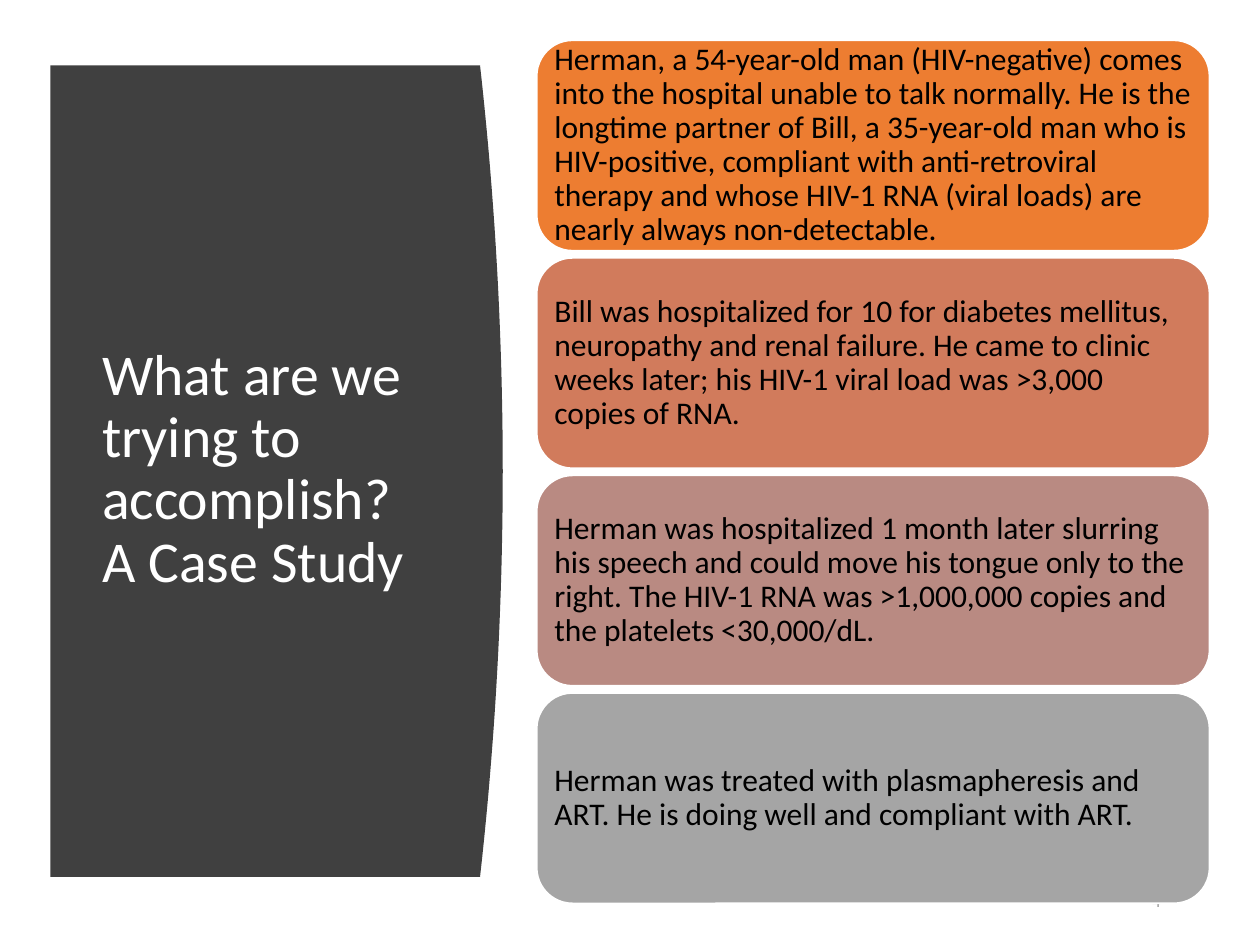
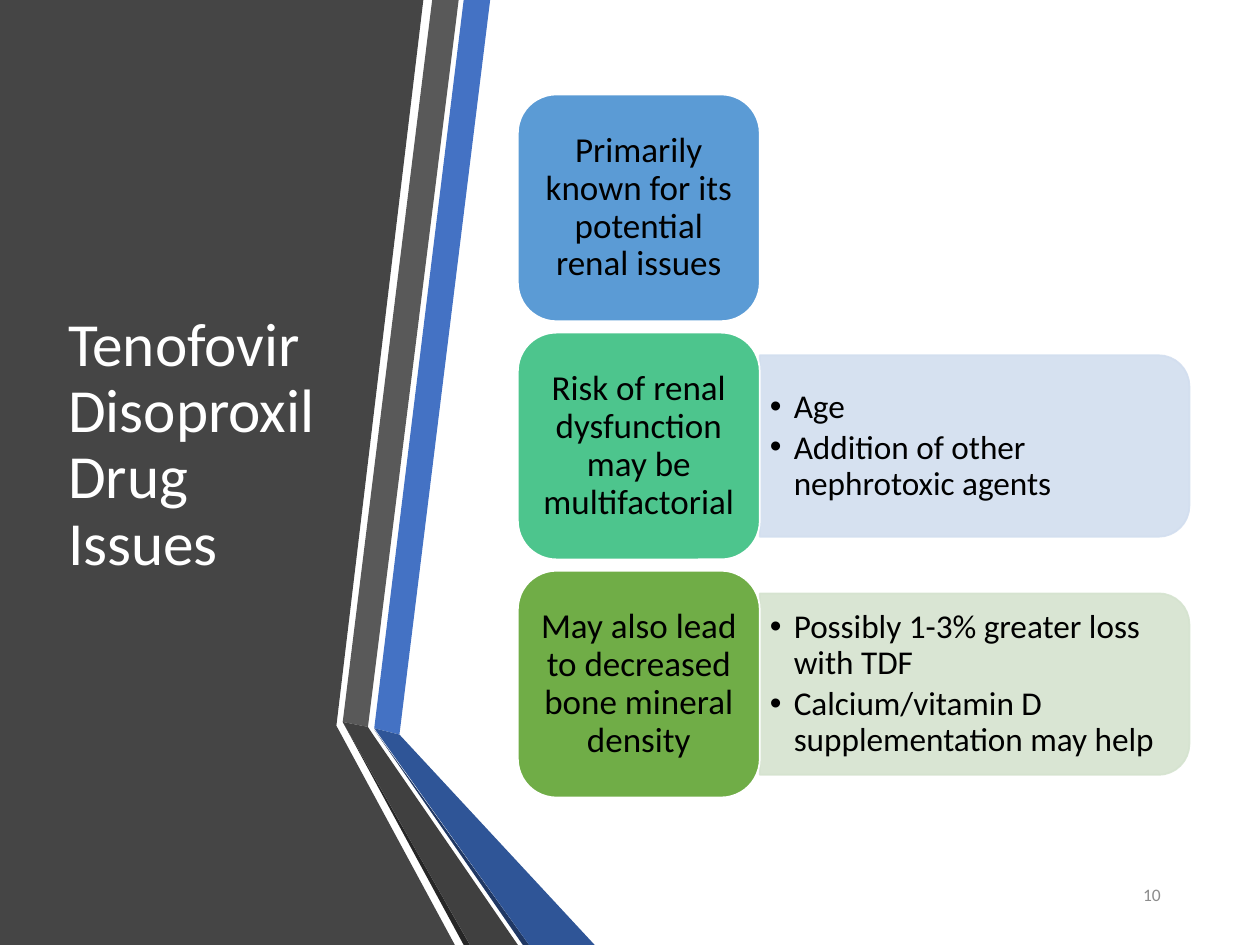
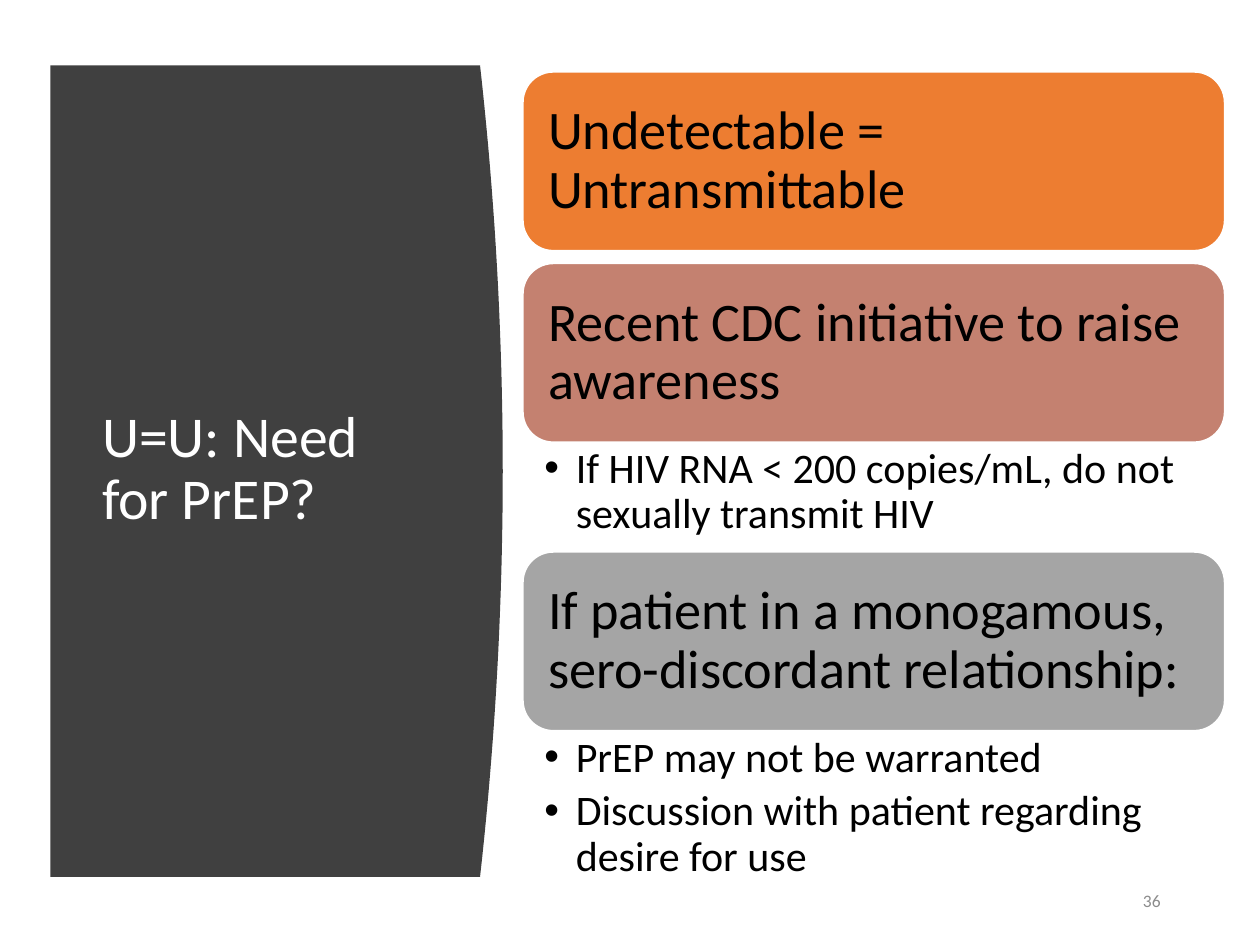
from dataclasses import dataclass
from math import cos, pi, sin

from lxml.etree import SubElement
from pptx import Presentation
from pptx.dml.color import RGBColor
from pptx.enum.shapes import MSO_SHAPE
from pptx.enum.text import MSO_ANCHOR, MSO_AUTO_SIZE, PP_ALIGN
from pptx.oxml.ns import qn
from pptx.util import Inches, Pt

FONT = "Calibri"
WHITE, BLACK = "FFFFFF", "000000"
NUMBER_GRAY = "8C8C8C"
PANEL_GRAY = "404040"
CORNER_RATIO = 0.17
CORNER_INSET = 0.29

Points = list[tuple[float, float]]


@dataclass(frozen=True)
class Box:
    left: float
    top: float
    width: float
    height: float


@dataclass(frozen=True)
class Margins:
    left: float
    top: float
    right: float
    bottom: float


@dataclass(frozen=True)
class TextStyle:
    size: float
    color: str = BLACK
    align: PP_ALIGN = PP_ALIGN.LEFT
    anchor: MSO_ANCHOR = MSO_ANCHOR.MIDDLE
    line_spacing: float = 0.9
    space_after: float = 0
    indent: float = 0


@dataclass(frozen=True)
class Ribbon:
    color: str
    points: Points


@dataclass(frozen=True)
class Card:
    text: str
    color: str
    bullets: tuple[str, ...] = ()
    detail_height: float = 0
    detail_color: str = ""


CASE_CARDS = (
    Card("Herman, a 54-year-old man (HIV-negative) comes into the hospital unable to talk "
         "normally. He is the longtime partner of Bill, a 35-year-old man who is HIV-positive, "
         "compliant with anti-retroviral therapy and whose HIV-1 RNA (viral loads) are nearly "
         "always non-detectable.", "ED7D31"),
    Card("Bill was hospitalized for 10 for diabetes mellitus, neuropathy and renal failure. "
         "He came to clinic weeks later; his HIV-1 viral load was >3,000 copies of RNA.",
         "D17B5C"),
    Card("Herman was hospitalized 1 month later slurring his speech and could move his tongue "
         "only to the right. The HIV-1 RNA was >1,000,000 copies and the platelets "
         "<30,000/dL.", "B98A82"),
    Card("Herman was treated with plasmapheresis and ART. He is doing well and compliant "
         "with ART.", "A5A5A5"),
)

DRUG_CARDS = (
    Card("Primarily known for its potential renal issues", "5B9BD5"),
    Card("Risk of renal dysfunction may be multifactorial", "4DC58D",
         ("Age", "Addition of other nephrotoxic agents"), 1.44, "D2DEEF"),
    Card("May also lead to decreased bone mineral density", "70AD47",
         ("Possibly 1-3% greater loss with TDF", "Calcium/vitamin D supplementation may help"),
         1.44, "D5E3CF"),
)

PREP_CARDS = (
    Card("Undetectable = Untransmittable", "ED7D31"),
    Card("Recent CDC initiative to raise awareness", "C48170",
         ("If HIV RNA < 200 copies/mL, do not sexually transmit HIV",), 0.87),
    Card("If patient in a monogamous, sero-discordant relationship:", "A5A5A5",
         ("PrEP may not be warranted", "Discussion with patient regarding desire for use"), 1.37),
)

RIBBONS = (
    Ribbon("454545", [(0, 0), (3.36, 0), (2.67, 5.76), (3.61, 7.5), (0, 7.5)]),
    Ribbon("4472C4", [(2.97, 5.78), (3.17, 5.83), (3.89, 0), (3.68, 0)]),
    Ribbon("595959", [(3.64, 0), (3.43, 0), (2.72, 5.73), (2.92, 5.77)]),
    Ribbon("262626", [(2.72, 5.73), (3.68, 7.5), (3.73, 7.5)]),
    Ribbon("203864", [(2.97, 5.79), (4.15, 7.5), (4.2, 7.5)]),
    Ribbon("2F5597", [(2.97, 5.78), (4.2, 7.5), (4.72, 7.5), (3.17, 5.83)]),
    Ribbon("404040", [(4.11, 7.5), (2.96, 5.83), (2.92, 5.77), (2.72, 5.73), (3.73, 7.5)]),
)


def rgb(color: str) -> RGBColor:
    return RGBColor.from_string(color)


def place(shape, box: Box) -> None:
    shape.left, shape.top = Inches(box.left), Inches(box.top)
    shape.width, shape.height = Inches(box.width), Inches(box.height)


def paint(shape, color: str, line_color: str = "") -> None:
    shape.shadow.inherit = False
    shape.fill.solid()
    shape.fill.fore_color.rgb = rgb(color)
    if line_color:
        shape.line.color.rgb = rgb(line_color)
        shape.line.width = Pt(1)
    else:
        shape.line.fill.background()


def make_translucent(shape, percent: int) -> None:
    for color in shape._element.spPr.iter(qn("a:srgbClr")):
        SubElement(color, qn("a:alpha"), val=str(percent * 1000))


def add_bullet(paragraph, indent: float) -> None:
    properties = paragraph._p.get_or_add_pPr()
    properties.set("marL", str(Inches(indent)))
    properties.set("indent", str(-Inches(indent)))
    SubElement(properties, qn("a:buFont"), typeface="Arial")
    SubElement(properties, qn("a:buChar"), char="•")


def write(shape, texts: tuple[str, ...], style: TextStyle,
          margins: Margins = Margins(0.1, 0.05, 0.1, 0.05)) -> None:
    frame = shape.text_frame
    frame.word_wrap = True
    frame.auto_size = MSO_AUTO_SIZE.NONE
    frame.vertical_anchor = style.anchor
    frame.margin_left, frame.margin_top = Inches(margins.left), Inches(margins.top)
    frame.margin_right, frame.margin_bottom = Inches(margins.right), Inches(margins.bottom)
    frame.text = "\n".join(texts)
    for paragraph in frame.paragraphs:
        paragraph.alignment = style.align
        paragraph.line_spacing = style.line_spacing
        paragraph.space_after = Pt(style.space_after)
        paragraph.font.name = FONT
        paragraph.font.size = Pt(style.size)
        paragraph.font.color.rgb = rgb(style.color)
        if style.indent:
            add_bullet(paragraph, style.indent)


def add_polygon(slide, points: Points, color: str, line_color: str = ""):
    corners = [(Inches(x), Inches(y)) for x, y in points]
    builder = slide.shapes.build_freeform(*corners[0])
    builder.add_line_segments(corners[1:], close=True)
    shape = builder.convert_to_shape()
    paint(shape, color, line_color)
    return shape


def add_curved_panel(slide) -> None:
    left, top, bottom, edge, bulge, steps = 0.4, 0.52, 6.96, 3.81, 0.18, 40
    curve = []
    for step in range(steps + 1):
        position = step / steps
        x = edge + bulge * (1 - (2 * position - 1) ** 2)
        curve.append((x, top + position * (bottom - top)))
    add_polygon(slide, [(left, top), *curve, (left, bottom)], PANEL_GRAY)


def add_title(slide, text: str, box: Box, size: float) -> None:
    title = slide.shapes.title
    slide.shapes._spTree.append(title._element)
    place(title, box)
    write(title, (text,), TextStyle(size, WHITE))


def add_number(slide, number: int, box: Box = Box(8.8, 6.95, 0.51, 0.4)) -> None:
    text_box = slide.shapes.add_textbox(0, 0, 0, 0)
    place(text_box, box)
    style = TextStyle(10, NUMBER_GRAY, PP_ALIGN.RIGHT, line_spacing=1)
    write(text_box, (str(number),), style)


def add_card(slide, card: Card, box: Box, style: TextStyle,
             margin_x: float, margin_y: float) -> None:
    shape = slide.shapes.add_shape(MSO_SHAPE.ROUNDED_RECTANGLE, 0, 0, 0, 0)
    place(shape, box)
    shape.adjustments[0] = CORNER_RATIO
    paint(shape, card.color, WHITE)
    corner = CORNER_INSET * CORNER_RATIO * min(box.width, box.height)
    x, y = margin_x - corner, margin_y - corner
    write(shape, (card.text,), style, Margins(x, y, x, y))


def add_detail_tab(slide, card: Card, box: Box) -> None:
    radius, steps = CORNER_RATIO * box.height, 8
    right, bottom = box.left + box.width, box.top + box.height
    angles = [pi / 2 * step / steps for step in range(steps + 1)]
    offsets = [(radius * (1 - sin(angle)), radius * (1 - cos(angle))) for angle in angles]
    upper = [(right - x, box.top + y) for x, y in offsets]
    lower = [(right - x, bottom - y) for x, y in reversed(offsets)]
    points = [(box.left, box.top), *upper, *lower, (box.left, bottom)]
    shape = add_polygon(slide, points, card.detail_color, card.detail_color)
    make_translucent(shape, 90)
    style = TextStyle(19, space_after=2.85, indent=0.19)
    write(shape, card.bullets, style, Margins(0.08, 0.11, 0.15, 0.11))


def new_slide(presentation):
    return presentation.slides.add_slide(presentation.slide_layouts[5])


def new_panel_slide(presentation, title: str, number: int):
    slide = new_slide(presentation)
    add_curved_panel(slide)
    add_title(slide, title, Box(0.71, 1.11, 2.8, 5.24), 33)
    add_number(slide, number)
    return slide


def build_case_study(presentation) -> None:
    slide = new_panel_slide(
        presentation, "What are we trying to accomplish? A Case Study", 4)
    first_top, last_top = 0.32, 5.5
    pitch = (last_top - first_top) / (len(CASE_CARDS) - 1)
    for index, card in enumerate(CASE_CARDS):
        box = Box(4.26, first_top + index * pitch, 5.34, 1.67)
        add_card(slide, card, box, TextStyle(18), 0.14, 0.14)


def build_drug_issues(presentation) -> None:
    slide = new_slide(presentation)
    for ribbon in RIBBONS:
        add_polygon(slide, ribbon.points, ribbon.color)
    add_title(slide, "Tenofovir Disoproxil Drug Issues", Box(0.44, 0.75, 2.28, 5.58), 35)
    for index, card in enumerate(DRUG_CARDS):
        box = Box(4.11, 0.75 + index * 1.89, 1.92, 1.8)
        if card.bullets:
            tab_top = box.top + (box.height - card.detail_height) / 2
            add_detail_tab(slide, card, Box(6.03, tab_top, 3.41, card.detail_height))
        add_card(slide, card, box, TextStyle(20, align=PP_ALIGN.CENTER), 0.17, 0.13)
    add_number(slide, 10, Box(8.42, 6.9, 0.89, 0.4))


def build_prep_need(presentation) -> None:
    slide = new_panel_slide(presentation, "U=U: Need for PrEP?", 36)
    left, top, width, height, gap = 4.15, 0.57, 5.57, 1.42, 0.1
    detail_style = TextStyle(24, anchor=MSO_ANCHOR.TOP, space_after=4.8, indent=0.25)
    for card in PREP_CARDS:
        add_card(slide, card, Box(left, top, width, height), TextStyle(31), 0.2, 0.2)
        top += height
        if card.bullets:
            detail = slide.shapes.add_textbox(0, 0, 0, 0)
            place(detail, Box(left, top, width, card.detail_height))
            write(detail, card.bullets, detail_style, Margins(0.17, 0.04, 0.24, 0.04))
        top += card.detail_height or gap


def main() -> None:
    presentation = Presentation()
    presentation.slide_width, presentation.slide_height = Inches(10), Inches(7.5)
    build_case_study(presentation)
    build_drug_issues(presentation)
    build_prep_need(presentation)
    presentation.save("out.pptx")


if __name__ == "__main__":
    main()
